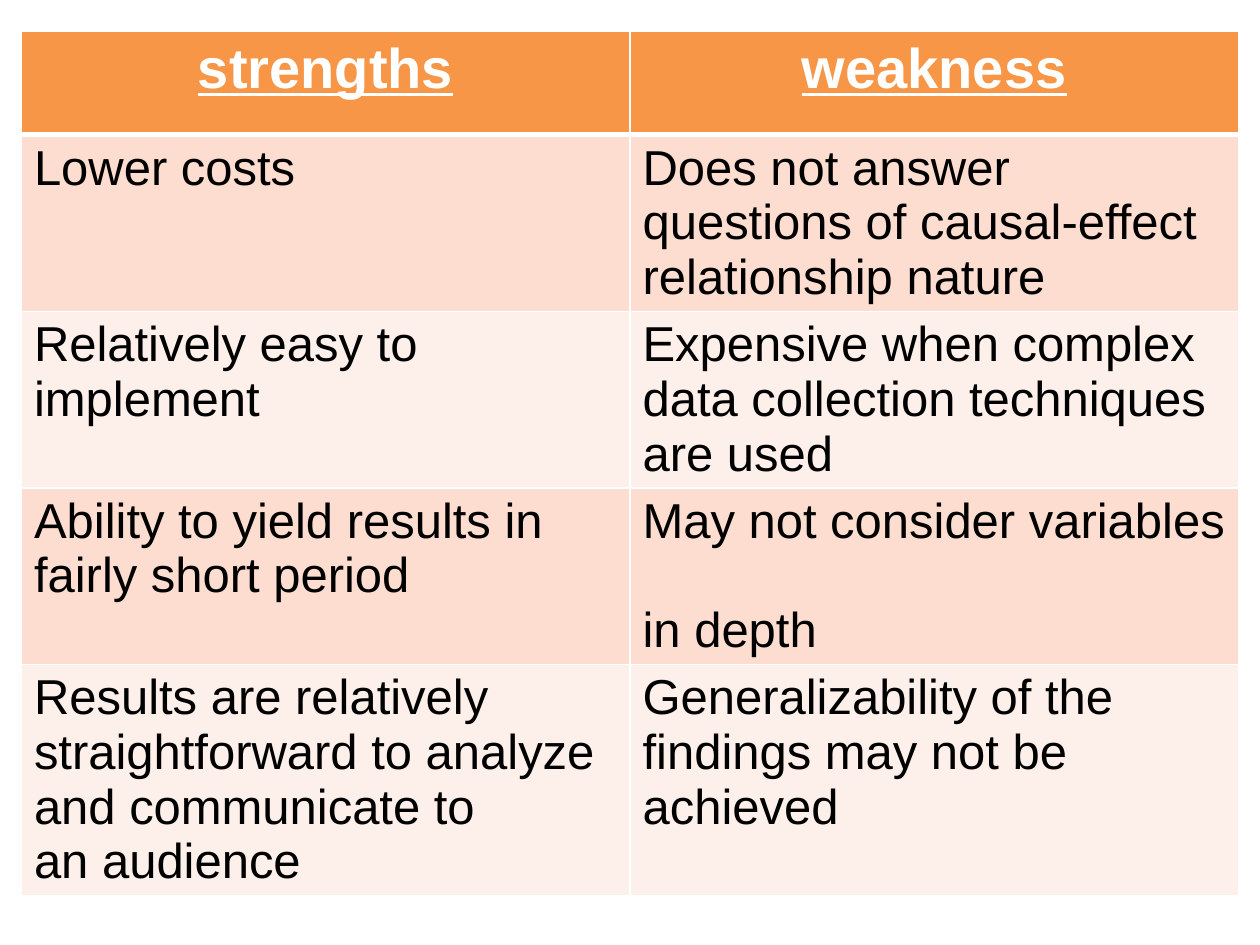
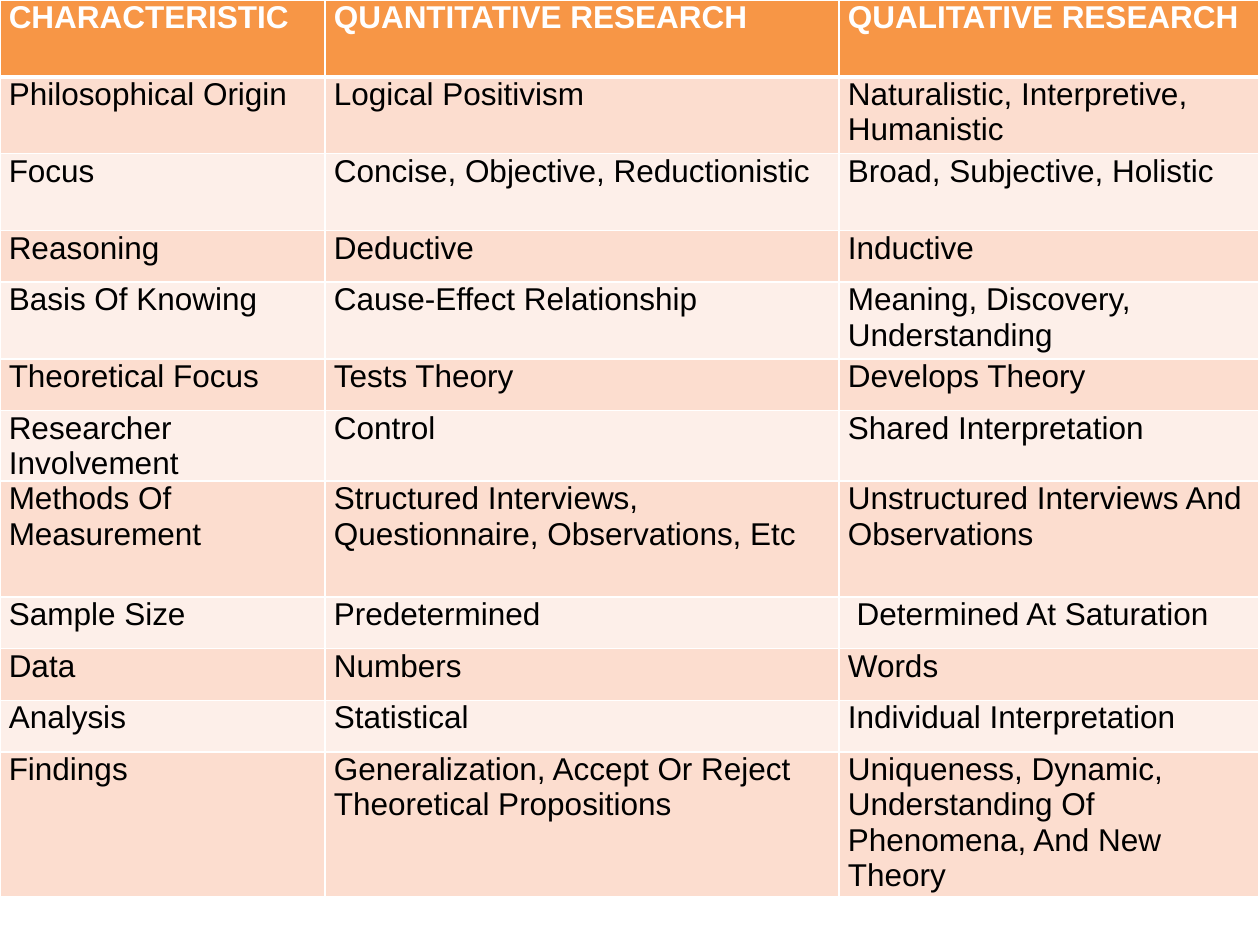
from lxml.etree import SubElement
from pptx import Presentation
from pptx.dml.color import RGBColor
from pptx.enum.text import PP_ALIGN as Align
from pptx.oxml.ns import qn
from pptx.util import Inches, Pt

COLORS = {
    "header": "F79646",
    "odd_row": "FCDDCF",
    "even_row": "FDEFE9",
    "border": "FFFFFF",
    "header_text": "FFFFFF",
    "body_text": "000000",
}
FONT = "Arial"

STRENGTHS_AND_WEAKNESSES = [
    ("strengths", "weakness"),
    ("Lower costs",
     "Does not answer questions of causal-effect relationship nature"),
    ("Relatively easy to implement",
     "Expensive when complex data collection techniques are used"),
    ("Ability to yield results in fairly short period",
     "May not consider variables \vin depth"),
    ("Results are relatively straightforward to analyze and communicate to \v"
     "an audience",
     "Generalizability of the findings may not be achieved"),
]

RESEARCH_COMPARISON = [
    ("CHARACTERISTIC", "QUANTITATIVE RESEARCH", "QUALITATIVE RESEARCH"),
    ("Philosophical Origin", "Logical Positivism",
     "Naturalistic, Interpretive, Humanistic"),
    ("Focus", "Concise, Objective, Reductionistic",
     "Broad, Subjective, Holistic"),
    ("Reasoning", "Deductive", "Inductive"),
    ("Basis Of Knowing", "Cause-Effect Relationship",
     "Meaning, Discovery, Understanding"),
    ("Theoretical Focus", "Tests Theory", "Develops Theory"),
    ("Researcher Involvement", "Control", "Shared Interpretation"),
    ("Methods Of Measurement",
     "Structured Interviews, Questionnaire, Observations, Etc",
     "Unstructured Interviews And Observations"),
    ("Sample Size", "Predetermined", " Determined At Saturation"),
    ("Data", "Numbers", "Words"),
    ("Analysis", "Statistical", "Individual Interpretation"),
    ("Findings", "Generalization, Accept Or Reject Theoretical Propositions",
     "Uniqueness, Dynamic, Understanding Of Phenomena, And New Theory"),
]


def rgb(name):
    return RGBColor.from_string(COLORS[name])


def set_borders(cell, row_index):
    """Thin white lines, with a thick one between header and body."""
    widths = {
        "lnL": 1,
        "lnR": 1,
        "lnT": 3 if row_index == 1 else 1,
        "lnB": 3 if row_index == 0 else 1,
    }
    properties = cell._tc.get_or_add_tcPr()
    for side, width in widths.items():
        line = SubElement(properties, qn(f"a:{side}"), w=str(Pt(width)))
        fill = SubElement(line, qn("a:solidFill"))
        SubElement(fill, qn("a:srgbClr"), val=COLORS["border"])


def style_cell(cell, row_index, size):
    is_header = row_index == 0
    set_borders(cell, row_index)
    band = "odd_row" if row_index % 2 else "even_row"
    cell.fill.solid()
    cell.fill.fore_color.rgb = rgb("header" if is_header else band)
    font = cell.text_frame.paragraphs[0].font
    font.name = FONT
    font.size = Pt(size)
    font.bold = is_header
    font.color.rgb = rgb("header_text" if is_header else "body_text")


def add_banded_table(page, left, top, widths, heights, rows,
                     header_size, body_size):
    frame = page.shapes.add_table(
        len(rows), len(widths), Inches(left), Inches(top),
        Inches(sum(widths)), Inches(sum(heights)))
    table = frame.table
    for column, width in zip(table.columns, widths):
        column.width = Inches(width)
    for row_index, (row, height, texts) in enumerate(
            zip(table.rows, heights, rows)):
        row.height = Inches(height)
        for cell, text in zip(row.cells, texts):
            cell.text_frame.text = text
            style_cell(cell, row_index, body_size if row_index else header_size)
    return table


def add_strengths_slide(deck):
    page = deck.slides.add_slide(deck.slide_layouts[6])
    table = add_banded_table(
        page, 0.17, 0.25, [4.83] * 2, [0.82, 1.4, 1.4, 1.4, 1.84],
        STRENGTHS_AND_WEAKNESSES, header_size=32, body_size=28)
    for cell in table.rows[0].cells:
        para = cell.text_frame.paragraphs[0]
        para.alignment = Align.CENTER
        para.font.underline = True


def add_comparison_slide(deck):
    page = deck.slides.add_slide(deck.slide_layouts[6])
    heights = [0.61, 0.61, 0.61, 0.41, 0.61, 0.41,
               0.56, 0.92, 0.41, 0.41, 0.41, 1.15]
    table = add_banded_table(
        page, 0, 0, [2.58, 4.08, 3.33], heights,
        RESEARCH_COMPARISON, header_size=18, body_size=18)
    for cell in table.iter_cells():
        cell.margin_left = cell.margin_right = Inches(0.07)
        cell.margin_top = cell.margin_bottom = 0


def main():
    deck = Presentation()
    deck.slide_width = Inches(10)
    deck.slide_height = Inches(7.5)
    add_strengths_slide(deck)
    add_comparison_slide(deck)
    deck.save("out.pptx")


if __name__ == "__main__":
    main()
